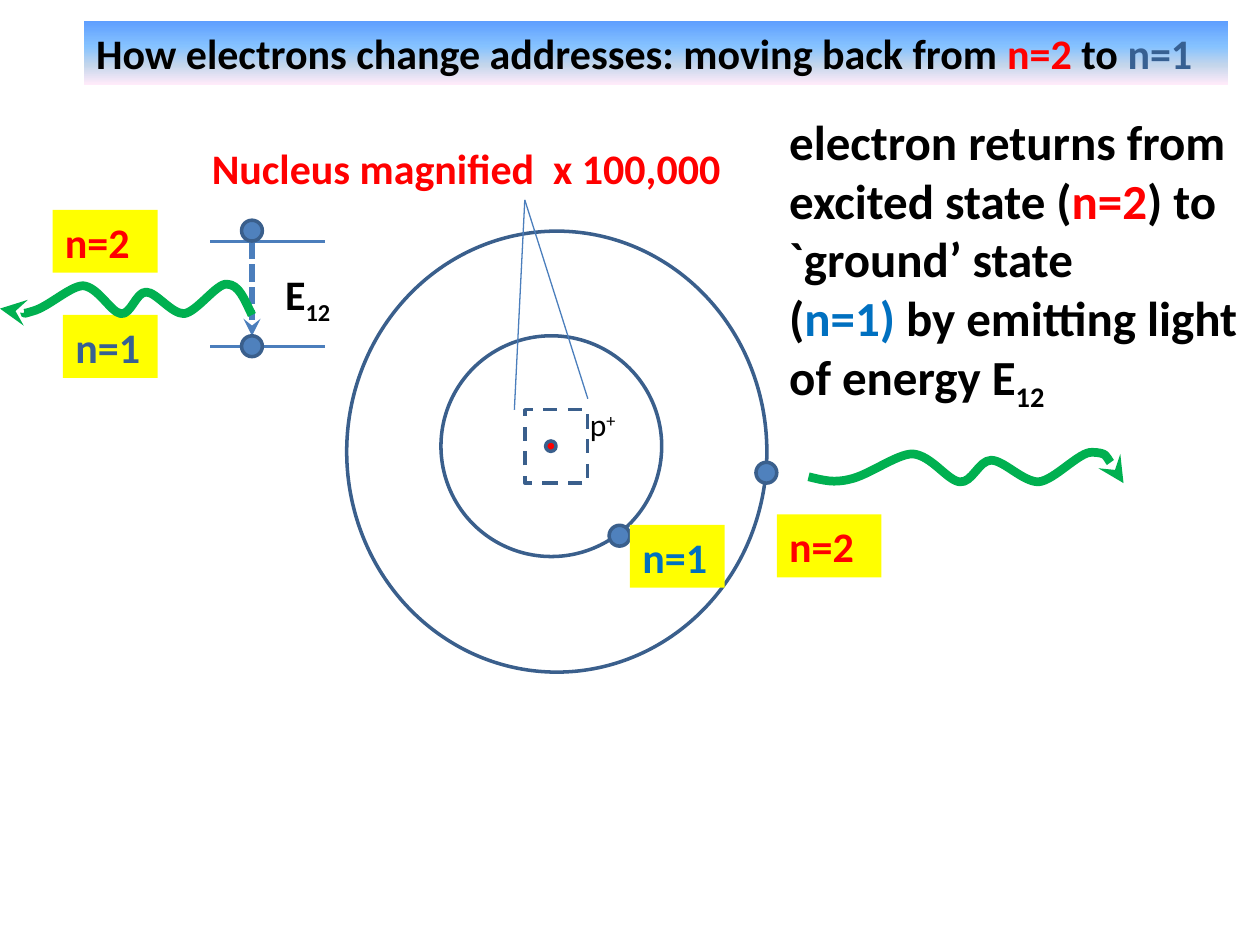
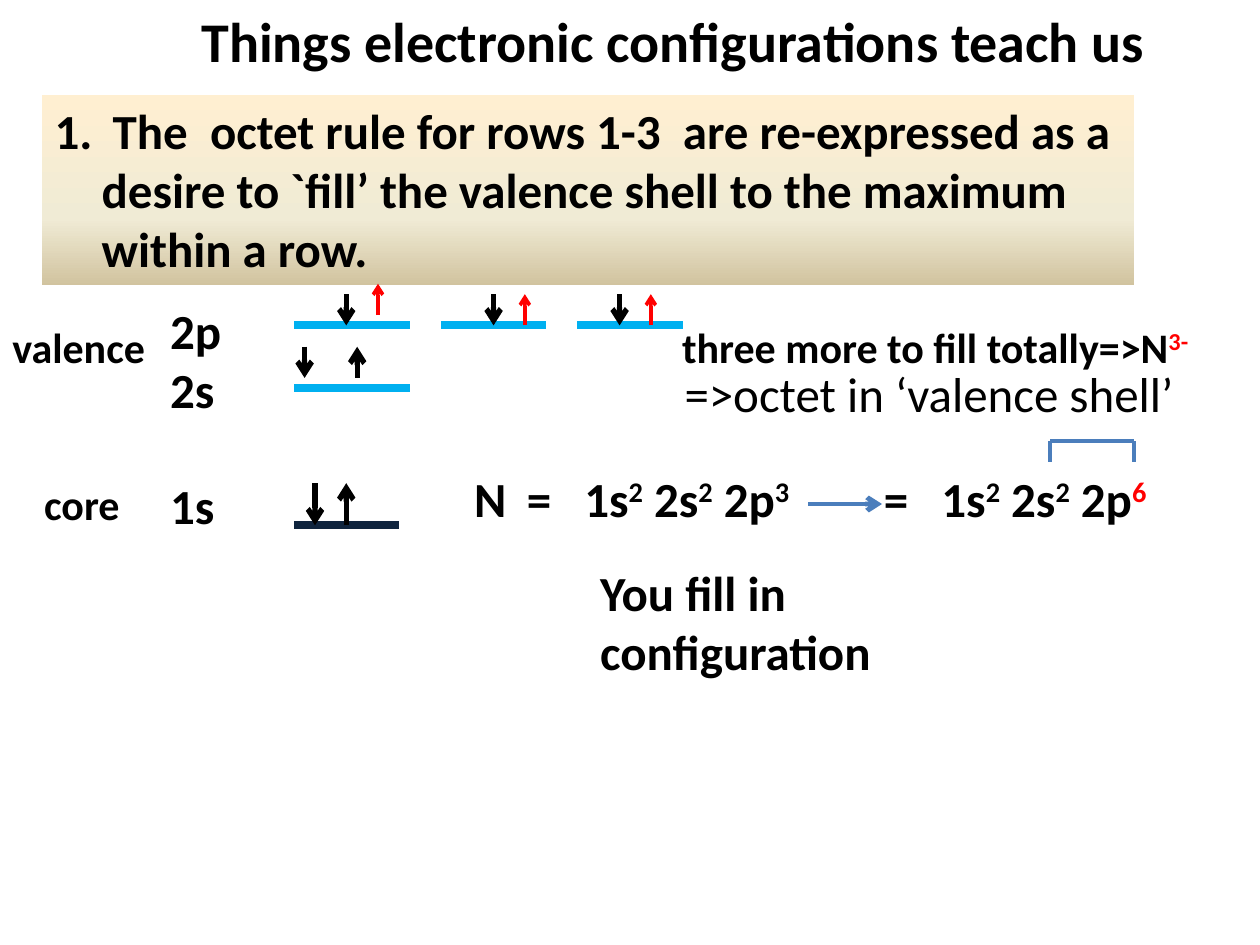
from lxml import etree
from pptx import Presentation
from pptx.dml.color import RGBColor
from pptx.enum import dml, shapes, text
from pptx.oxml import ns
from pptx.util import Cm, Pt

FONT = "Calibri"
BLACK = RGBColor(0x00, 0x00, 0x00)
RED = RGBColor(0xFF, 0x00, 0x00)
YELLOW = RGBColor(0xFF, 0xFF, 0x00)
GREEN = RGBColor(0x00, 0xB0, 0x50)
BRIGHT_BLUE = RGBColor(0x00, 0x70, 0xC0)
SLATE_BLUE = RGBColor(0x37, 0x60, 0x92)
LINE_BLUE = RGBColor(0x4B, 0x7E, 0xBC)
ELECTRON_BLUE = RGBColor(0x4F, 0x81, 0xBD)
OUTLINE_BLUE = RGBColor(0x3A, 0x5F, 0x8C)
VALENCE_BLUE = RGBColor(0x00, 0xB0, 0xF0)
CORE_NAVY = RGBColor(0x0F, 0x24, 0x3E)
SKY_GRADIENT = [
    (0, RGBColor(0x5E, 0x9E, 0xFF)),
    (40, RGBColor(0x85, 0xC2, 0xFF)),
    (70, RGBColor(0xC4, 0xD6, 0xEB)),
    (100, RGBColor(0xFF, 0xEB, 0xFA)),
]
SAND_GRADIENT = [
    (0, RGBColor(0xFF, 0xEF, 0xD1)),
    (65, RGBColor(0xF0, 0xEB, 0xD5)),
    (100, RGBColor(0xD1, 0xC3, 0x9F)),
]
SUPERSCRIPT, SUBSCRIPT = 30, -25
ELECTRON_SIZE = 0.42
WAVE_POINTS = [
    (1, 1),
    (0.97, 0.52), (0.95, 0.04), (0.9, 0.03),
    (0.86, 0), (0.78, 0.92), (0.73, 0.96),
    (0.68, 0.96), (0.62, 0.28), (0.58, 0.28),
    (0.54, 0.28), (0.52, 1), (0.48, 0.96),
    (0.44, 0.92), (0.39, 0.12), (0.33, 0.08),
    (0.28, 0.08), (0.19, 0.76), (0.13, 0.88),
    (0.08, 1), (0.05, 0.92), (0, 0.8),
]


def add_text(slide, left, top, width, height, paragraphs, size=28, bold=True):
    shape = slide.shapes.add_textbox(Cm(left), Cm(top), Cm(width), Cm(height))
    frame = shape.text_frame
    frame.word_wrap = True
    frame.auto_size = text.MSO_AUTO_SIZE.SHAPE_TO_FIT_TEXT
    for index, runs in enumerate(paragraphs):
        paragraph = frame.add_paragraph() if index else frame.paragraphs[0]
        for words, color, baseline in runs:
            run = paragraph.add_run()
            run.text = words
            run.font.name = FONT
            run.font.size = Pt(size)
            run.font.bold = bold
            run.font.color.rgb = color
            if baseline:
                run._r.get_or_add_rPr().set("baseline", str(baseline * 1000))
    return shape


def plain(words, color=BLACK):
    return [(words, color, 0)]


def fill_gradient(shape, stops):
    shape.fill.gradient()
    shape.fill.gradient_angle = 270
    stop_list = shape._element.spPr.find(ns.qn("a:gradFill")).find(ns.qn("a:gsLst"))
    for stop in list(stop_list):
        stop_list.remove(stop)
    for position, color in stops:
        stop = etree.SubElement(stop_list, ns.qn("a:gs"), pos=str(position * 1000))
        etree.SubElement(stop, ns.qn("a:srgbClr"), val=str(color))


def add_arrowhead(shape, end, kind):
    outline = shape.line._get_or_add_ln()
    etree.SubElement(outline, ns.qn(f"a:{end}End"), type=kind)


def add_line(slide, start, end, color, width, arrow=None, dash=None):
    points = [Cm(value) for value in (*start, *end)]
    line = slide.shapes.add_connector(shapes.MSO_CONNECTOR.STRAIGHT, *points)
    line.line.color.rgb = color
    line.line.width = Pt(width)
    if dash:
        line.line.dash_style = dash
    if arrow:
        add_arrowhead(line, "tail", arrow)
    etree.SubElement(line._element.spPr, ns.qn("a:effectLst"))
    return line


def add_outline(slide, kind, left, top, width, height, fill=None):
    shape = slide.shapes.add_shape(kind, Cm(left), Cm(top), Cm(width), Cm(height))
    shape.shadow.inherit = False
    if fill is None:
        shape.fill.background()
    else:
        shape.fill.solid()
        shape.fill.fore_color.rgb = fill
    shape.line.color.rgb = OUTLINE_BLUE
    shape.line.width = Pt(2)
    return shape


def add_circle(slide, left, top, width, height, fill=None):
    return add_outline(slide, shapes.MSO_SHAPE.OVAL, left, top, width, height, fill)


def add_electron(slide, center_x, center_y):
    radius = ELECTRON_SIZE / 2
    return add_circle(slide, center_x - radius, center_y - radius,
                      ELECTRON_SIZE, ELECTRON_SIZE, ELECTRON_BLUE)


def add_tag(slide, left, top, width, words, color):
    tag = add_text(slide, left, top, width, 1.27, [plain(words, color)], 24)
    tag.fill.solid()
    tag.fill.fore_color.rgb = YELLOW


def curve_segments(shape):
    segments = list(shape._element.spPr.iter(ns.qn("a:lnTo")))
    outline = segments[0].getparent()
    for index in range(0, len(segments), 3):
        curve = etree.SubElement(outline, ns.qn("a:cubicBezTo"))
        for segment in segments[index:index + 3]:
            curve.append(segment[0])
            outline.remove(segment)


def add_light_wave(slide, left, top, width, height, arrow_end):
    points = [(Cm(left + x * width), Cm(top + y * height)) for x, y in WAVE_POINTS]
    builder = slide.shapes.build_freeform(*points[0])
    builder.add_line_segments(points[1:], close=False)
    wave = builder.convert_to_shape()
    curve_segments(wave)
    wave.shadow.inherit = False
    wave.fill.background()
    wave.line.color.rgb = GREEN
    wave.line.width = Pt(5)
    add_arrowhead(wave, arrow_end, "stealth")


def add_title_band(slide, left, top, width, height):
    runs = [("How electrons change addresses: moving back from ", BLACK, 0),
            ("n=2", RED, 0), (" to ", BLACK, 0), ("n=1", SLATE_BLUE, 0)]
    band = add_text(slide, left, top, width, height, [runs], 24)
    fill_gradient(band, SKY_GRADIENT)


def add_atom(slide, left, top):
    add_circle(slide, left + 4.87, top + 4.02, 4.45, 4.45)
    add_circle(slide, left + 2.97, top + 1.91, 8.47, 8.89)
    add_circle(slide, left + 6.98, top + 6.14, 0.21, 0.21, RED)
    frame = add_outline(slide, shapes.MSO_SHAPE.RECTANGLE, left + 6.56, top + 5.51, 1.27, 1.48)
    frame.line.dash_style = dml.MSO_LINE.DASH
    label = add_text(slide, left, top, 13.12, 1.28,
                     [plain("Nucleus magnified  x 100,000", RED)], 24)
    for x, y in ((6.35, 5.51), (7.83, 5.29)):
        ray = add_line(slide, (left + 6.56, top + 1.28), (left + x, top + y), LINE_BLUE, 0.75)
        ray.begin_connect(label, 2)
    add_electron(slide, left + 11.43, top + 6.78)
    add_electron(slide, left + 8.47, top + 8.05)
    add_text(slide, left + 7.62, top + 5.29, 1.27, 1.03,
             [[("p", BLACK, 0), ("+", BLACK, SUPERSCRIPT)]], 18, False)
    add_tag(slide, left + 11.64, top + 7.62, 2.11, "n=2", RED)
    add_tag(slide, left + 8.68, top + 7.83, 1.91, "n=1", BRIGHT_BLUE)


def add_energy_levels(slide, left, top):
    add_tag(slide, left + 1.06, top, 2.12, "n=2", RED)
    add_tag(slide, left + 1.27, top + 2.12, 1.91, "n=1", SLATE_BLUE)
    for level in (0.64, 2.75):
        add_line(slide, (left + 4.24, top + level), (left + 6.55, top + level), LINE_BLUE, 1.5)
    drop = add_line(slide, (left + 5.08, top + 0.64), (left + 5.08, top + 2.54),
                    LINE_BLUE, 3.25, "stealth", dml.MSO_LINE.SQUARE_DOT)
    add_text(slide, left + 5.5, top + 1.06, 1.9, 1.27,
             [[("E", BLACK, 0), ("12", BLACK, SUBSCRIPT)]], 24)
    add_electron(slide, left + 5.08, top + 0.42)
    ground_electron = add_electron(slide, left + 5.08, top + 2.75)
    drop.end_connect(ground_electron, 0)
    add_light_wave(slide, left, top + 1.48, 5.08, 0.64, "tail")


def add_emission_note(slide, left, top):
    add_text(slide, left, top, 9.74, 6.24, [
        [("electron returns from excited state (", BLACK, 0), ("n=2", RED, 0),
         (") to `ground’ state", BLACK, 0)],
        [("(", BLACK, 0), ("n=1) ", BRIGHT_BLUE, 0),
         ("by emitting light of energy E", BLACK, 0), ("12", BLACK, SUBSCRIPT)],
    ])
    add_light_wave(slide, left + 0.64, top + 6.98, 6.35, 0.64, "head")


def add_octet_rule(slide, left, top, width, height):
    rule = add_text(slide, left, top, width, height, [plain(
        " The  octet rule for rows 1-3  are re-expressed as a desire to "
        "`fill’ the valence shell to the maximum within a row.")])
    fill_gradient(rule, SAND_GRADIENT)
    properties = rule.text_frame.paragraphs[0]._p.get_or_add_pPr()
    properties.set("marL", str(Cm(0.95)))
    properties.set("indent", str(-Cm(0.95)))
    etree.SubElement(properties, ns.qn("a:buFont"), typeface="+mj-lt")
    etree.SubElement(properties, ns.qn("a:buAutoNum"), type="arabicPeriod")


def add_orbitals(slide, left, top):
    orbitals = [
        (5.93, 8.26, 0.63, VALENCE_BLUE), (8.89, 11.01, 0.63, VALENCE_BLUE),
        (11.64, 13.76, 0.63, VALENCE_BLUE), (5.93, 8.26, 1.9, VALENCE_BLUE),
        (5.93, 8.04, 4.66, CORE_NAVY),
    ]
    for start, end, y, color in orbitals:
        add_line(slide, (left + start, top + y), (left + end, top + y), color, 4.5)
    names = add_text(slide, left + 3.18, top, 2.11, 6.25, [plain("2p"), plain("2s"), plain("1s")])
    names.text_frame.paragraphs[2].space_before = Pt(33)
    add_text(slide, left, top + 0.42, 3.81, 1.27, [plain("valence")], 24)
    add_text(slide, left + 0.64, top + 3.6, 2.74, 1.27, [plain("core")], 24)

    paired_spins = [
        (6.35, 3.81, 4.66), (6.98, 4.66, 3.81), (6.14, 1.06, 1.69), (7.2, 1.69, 1.06),
        (6.98, 0, 0.63), (9.95, 0, 0.63), (12.49, 0, 0.63),
    ]
    added_spins = [(7.62, 0.42, -0.21), (10.58, 0.63, 0), (13.12, 0.63, 0)]
    for spins, color, width in ((paired_spins, BLACK, 3), (added_spins, RED, 2)):
        for x, start, end in spins:
            add_line(slide, (left + x, top + start), (left + x, top + end), color, width, "arrow")


def add_configuration(slide, left, top, p_count, p_color):
    runs = [("=\t1s", BLACK, 0), ("2", BLACK, SUPERSCRIPT), (" 2s", BLACK, 0),
            ("2", BLACK, SUPERSCRIPT), (" 2p", BLACK, 0), (p_count, p_color, SUPERSCRIPT)]
    shape = add_text(slide, left, top, 6.99, 1.45, [runs])
    properties = shape.text_frame.paragraphs[0]._p.get_or_add_pPr()
    tabs = etree.SubElement(properties, ns.qn("a:tabLst"))
    etree.SubElement(tabs, ns.qn("a:tab"), pos=str(Cm(1.16)), algn="l")


def add_nitrogen_example(slide, left, top):
    add_text(slide, left, top + 2.97, 2.34, 1.45, [plain("N")])
    add_configuration(slide, left + 1.06, top + 2.97, "3", BLACK)
    add_configuration(slide, left + 8.26, top + 2.97, "6", RED)
    add_line(slide, (left + 6.98, top + 3.81), (left + 8.47, top + 3.81), LINE_BLUE, 2.75, "arrow")
    add_text(slide, left + 2.54, top + 4.87, 8.47, 2.65, [plain("You fill in configuration")])
    add_text(slide, left + 4.19, top, 11.9, 1.27,
             [[("three more to fill totally=>N", BLACK, 0), ("3-", RED, SUPERSCRIPT)]], 24)
    add_text(slide, left + 4.24, top + 0.85, 11.85, 1.45,
             [plain("=>octet in ‘valence shell’")], bold=False)
    bracket = [(left + x, top + y)
               for x, y in ((11.86, 2.96), (11.86, 2.54), (13.55, 2.54), (13.55, 2.96))]
    for start, end in zip(bracket, bracket[1:]):
        add_line(slide, start, end, LINE_BLUE, 2.5)


def build_emission_slide(slide):
    add_title_band(slide, 1.69, 0.42, 23.07, 1.28)
    add_atom(slide, 4.02, 2.75)
    add_energy_levels(slide, 0, 4.23)
    add_emission_note(slide, 15.66, 2.12)


def build_octet_slide(slide):
    add_text(slide, 3.81, 0, 21.59, 1.63, [plain("Things electronic configurations teach us")], 32)
    add_octet_rule(slide, 0.85, 1.91, 22.01, 3.84)
    add_orbitals(slide, 0, 5.93)
    add_nitrogen_example(slide, 9.31, 6.35)


def main():
    presentation = Presentation()
    presentation.slide_width = Cm(25.4)
    presentation.slide_height = Cm(19.05)
    for build in (build_emission_slide, build_octet_slide):
        build(presentation.slides.add_slide(presentation.slide_layouts[6]))
    presentation.save("out.pptx")


if __name__ == "__main__":
    main()
